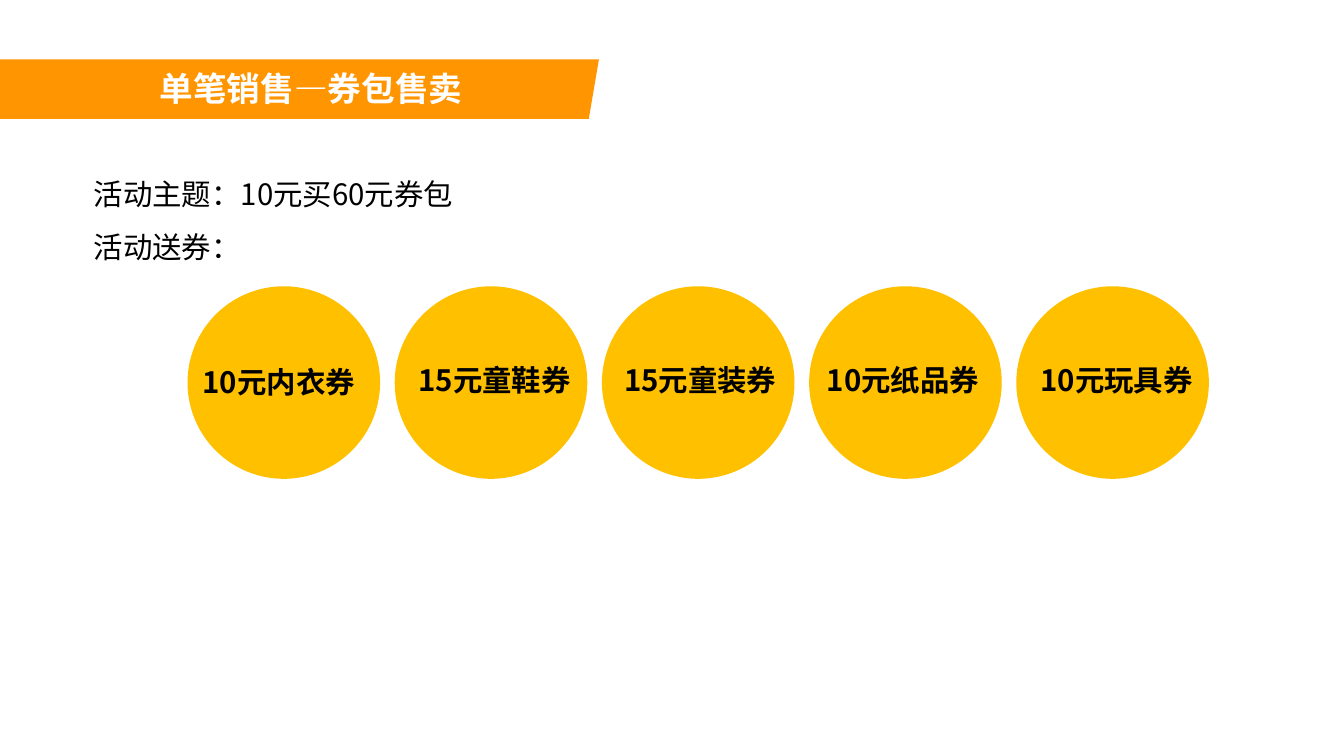
"""Build the coupon pack sales slide."""
from typing import NamedTuple

from lxml.etree import SubElement
from pptx import Presentation
from pptx.dml.color import RGBColor
from pptx.enum.shapes import MSO_SHAPE as Shape
from pptx.enum.text import PP_ALIGN as Align
from pptx.oxml.ns import qn
from pptx.slide import Slide
from pptx.util import Inches, Pt

FONT = "Noto Sans CJK SC"
BLACK = RGBColor(0x00, 0x00, 0x00)
WHITE = RGBColor(0xFF, 0xFF, 0xFF)
GOLD = RGBColor(0xFF, 0xC0, 0x00)
ORANGE = RGBColor(0xFF, 0x95, 0x00)
LEFT, TOP, SIZE, STEP = 1.86, 2.84, 1.91, 2.055


class Coupon(NamedTuple):
    text: str
    left: float
    top: float
    width: float


class Style(NamedTuple):
    size: float = 21
    color: RGBColor = BLACK
    bold: bool = True
    align: Align = Align.LEFT
    space: float = 1.0
    pad: tuple[float, float] = (0.13, 0.07)


COUPONS = [
    Coupon("10元内衣券", 1.88, 3.54, 2.39),
    Coupon("15元童鞋券", 4.02, 3.52, 1.81),
    Coupon("15元童装券", 6.06, 3.52, 2.13),
    Coupon("10元纸品券", 8.07, 3.52, 2.23),
    Coupon("10元玩具券", 10.19, 3.52, 2.2),
]


def write(slide: Slide, lines: list[str], box: tuple[float, ...], style: Style) -> None:
    frame = slide.shapes.add_textbox(*map(Inches, box)).text_frame
    frame.word_wrap = True
    frame.margin_left = frame.margin_right = Inches(style.pad[0])
    frame.margin_top = frame.margin_bottom = Inches(style.pad[1])
    frame.text = "\n".join(lines)
    for para in frame.paragraphs:
        para.alignment = style.align
        para.line_spacing = style.space
        font = para.font
        font.size, font.bold, font.name = Pt(style.size), style.bold, FONT
        font.color.rgb = style.color
        props = para._p.get_or_add_pPr().find(qn("a:defRPr"))
        SubElement(props, qn("a:ea"), typeface=FONT)


def paint(shape, color: RGBColor) -> None:
    shape.shadow.inherit = False
    shape.fill.solid()
    shape.fill.fore_color.rgb = color
    shape.line.fill.background()


def banner(slide: Slide) -> None:
    pen = slide.shapes.build_freeform(0, Inches(0.59), scale=1.0)
    edge = [(5.94, 0.59), (5.84, 1.18), (0, 1.18)]
    pen.add_line_segments([(Inches(x), Inches(y)) for x, y in edge], close=True)
    paint(pen.convert_to_shape(), ORANGE)
    title = Style(size=24, color=WHITE, align=Align.CENTER, pad=(0, 0))
    write(slide, ["单笔销售—券包售卖"], (0.92, 0.67, 4.33, 0.4), title)


def main() -> None:
    deck = Presentation()
    deck.slide_width, deck.slide_height = Inches(13.33), Inches(7.5)
    slide = deck.slides.add_slide(deck.slide_layouts[6])
    intro = ["活动主题：10元买60元券包", "活动送券："]
    write(slide, intro, (0.8, 1.5, 11.91, 1.2), Style(bold=False, space=1.5))
    for i, coupon in enumerate(COUPONS):
        place = map(Inches, (LEFT + i * STEP, TOP, SIZE, SIZE))
        paint(slide.shapes.add_shape(Shape.OVAL, *place), GOLD)
        box = (coupon.left, coupon.top, coupon.width, 0.49)
        write(slide, [coupon.text], box, Style())
    banner(slide)
    deck.save("out.pptx")


if __name__ == "__main__":
    main()
